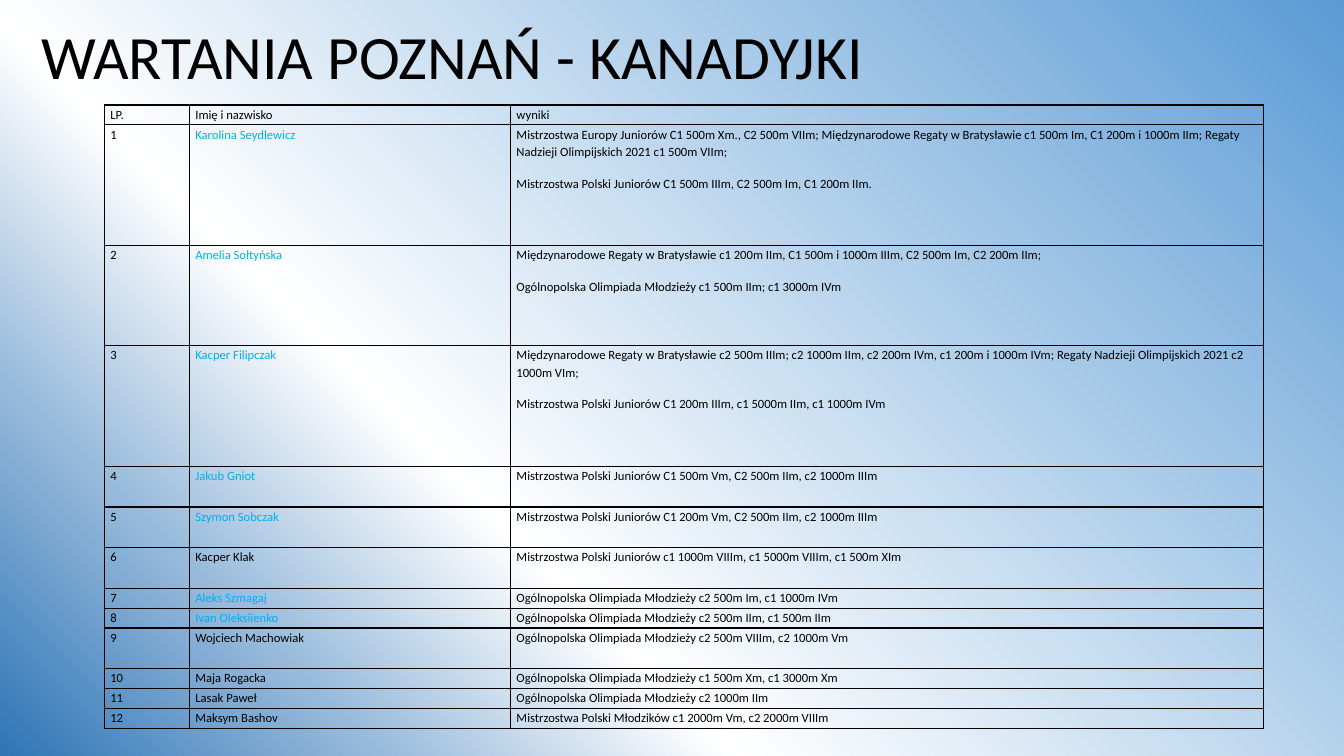
"""Build the Wartania Poznań canoeing results slide."""
import dataclasses

import pptx
import pptx.dml.color
import pptx.enum.text
import pptx.oxml
import pptx.oxml.ns
import pptx.util

Pt = pptx.util.Pt


@dataclasses.dataclass(frozen=True)
class Theme:
    font: str = "Calibri"
    text: str = "000000"
    highlight: str = "00B0F0"
    title_size: int = 44
    table_size: int = 9
    background: tuple = ((0, "2E75B6"), (18, "97BADB"), (35, "FFFFFF"), (100, "5B9BD5"))


theme = Theme()


def style(para, size, color, spacing):
    para.line_spacing = spacing
    para.font.name = theme.font
    para.font.size = Pt(size)
    para.font.color.rgb = pptx.dml.color.RGBColor.from_string(color)


def add_borders(cell):
    properties = cell._tc.get_or_add_tcPr()
    for index, side in enumerate(("lnL", "lnR", "lnT", "lnB")):
        properties.insert(index, pptx.oxml.parse_xml(
            f'<a:{side} {pptx.oxml.ns.nsdecls("a")} w="{Pt(1)}"><a:solidFill>'
            f'<a:srgbClr val="{theme.text}"/></a:solidFill></a:{side}>'))


deck = pptx.Presentation()
deck.slide_width, deck.slide_height = Pt(960), Pt(540)
page = deck.slides.add_slide(deck.slide_layouts[5])

stops = "".join(f'<a:gs pos="{position * 1000}"><a:srgbClr val="{color}"/></a:gs>'
                for position, color in theme.background)
page.element.cSld.insert(0, pptx.oxml.parse_xml(
    f'<p:bg {pptx.oxml.ns.nsdecls("p", "a")}><p:bgPr><a:gradFill rotWithShape="1">'
    f'<a:gsLst>{stops}</a:gsLst><a:path path="circle">'
    '<a:fillToRect t="100000" r="100000"/></a:path></a:gradFill>'
    '<a:effectLst/></p:bgPr></p:bg>'))

title = page.shapes.title
title.left, title.top, title.width, title.height = Pt(22.3), Pt(10), Pt(828), Pt(65)
title.text_frame.text = "WARTANIA POZNAŃ - KANADYJKI"
title.text_frame.vertical_anchor = pptx.enum.text.MSO_ANCHOR.MIDDLE
title.text_frame.auto_size = pptx.enum.text.MSO_AUTO_SIZE.NONE
heading = title.text_frame.paragraphs[0]
heading.alignment = pptx.enum.text.PP_ALIGN.LEFT
style(heading, theme.title_size, theme.text, 0.9)

short, medium, tall, tallest = 14.2, 29.1, 71.5, 86.2
athletes = [
    (tallest, "Karolina Seydlewicz", True,
     "Mistrzostwa Europy Juniorów C1 500m Xm., C2 500m VIIm; Międzynarodowe Regaty w Bratysławie "
     "c1 500m Im, C1 200m i 1000m IIm; Regaty Nadzieji Olimpijskich 2021 c1 500m VIIm;\n"
     "Mistrzostwa Polski Juniorów C1 500m IIIm, C2 500m Im, C1 200m IIm."),
    (tall, "Amelia Sołtyńska", True,
     "Międzynarodowe Regaty w Bratysławie c1 200m IIm, C1 500m i 1000m IIIm, C2 500m Im, C2 200m IIm;\n"
     "Ogólnopolska Olimpiada Młodzieży c1 500m IIm; c1 3000m IVm"),
    (tallest, "Kacper Filipczak", True,
     "Międzynarodowe Regaty w Bratysławie c2 500m IIIm; c2 1000m IIm, c2 200m IVm, "
     "c1 200m i 1000m IVm; Regaty Nadzieji Olimpijskich 2021 c2 1000m VIm;\n"
     "Mistrzostwa Polski Juniorów C1 200m IIIm, c1 5000m IIm, c1 1000m IVm"),
    (medium, "Jakub Gniot", True, "Mistrzostwa Polski Juniorów C1 500m Vm, C2 500m IIm, c2 1000m IIIm"),
    (medium, "Szymon Sobczak", True, "Mistrzostwa Polski Juniorów C1 200m Vm, C2 500m IIm, c2 1000m IIIm"),
    (medium, "Kacper Klak", False, "Mistrzostwa Polski Juniorów c1 1000m VIIIm, c1 5000m VIIIm, c1 500m XIm"),
    (short, "Aleks Szmagaj", True, "Ogólnopolska Olimpiada Młodzieży c2 500m Im, c1 1000m IVm"),
    (short, "Ivan Oleksiienko", True, "Ogólnopolska Olimpiada Młodzieży c2 500m IIm, c1 500m IIm"),
    (medium, "Wojciech Machowiak", False, "Ogólnopolska Olimpiada Młodzieży c2 500m VIIIm, c2 1000m Vm"),
    (short, "Maja Rogacka", False, "Ogólnopolska Olimpiada Młodzieży c1 500m Xm, c1 3000m Xm"),
    (short, "Lasak Paweł", False, "Ogólnopolska Olimpiada Młodzieży c2 1000m IIm"),
    (short, "Maksym Bashov", False, "Mistrzostwa Polski Młodzików c1 2000m Vm, c2 2000m VIIIm"),
]
rows = [(short, False, ("LP.", "Imię i nazwisko", "wyniki"))]
for number, (height, name, highlighted, results) in enumerate(athletes, 1):
    for distance in ("200m", "500m"):
        results = results.replace(" " + distance, chr(160) + distance)
    rows.append((height, highlighted, (str(number), name, results)))

widths = (60.8, 229.4, 537.8)
frame = page.shapes.add_table(len(rows), len(widths), Pt(74.5), Pt(75),
                              Pt(sum(widths)), Pt(sum(row[0] for row in rows)))
table = frame.table
table.first_row = table.horz_banding = False
for column, width in zip(table.columns, widths):
    column.width = Pt(width)

for row_index, (height, highlighted, texts) in enumerate(rows):
    table.rows[row_index].height = Pt(height)
    for column_index, text in enumerate(texts):
        cell = table.cell(row_index, column_index)
        cell.margin_left = cell.margin_right = Pt(4.3)
        cell.margin_top = cell.margin_bottom = Pt(0)
        cell.fill.background()
        add_borders(cell)
        cell.text_frame.text = text
        color = theme.highlight if highlighted and column_index == 1 else theme.text
        for para in cell.text_frame.paragraphs:
            para.space_after = Pt(10)
            style(para, theme.table_size, color, 1.15)

deck.save("out.pptx")
